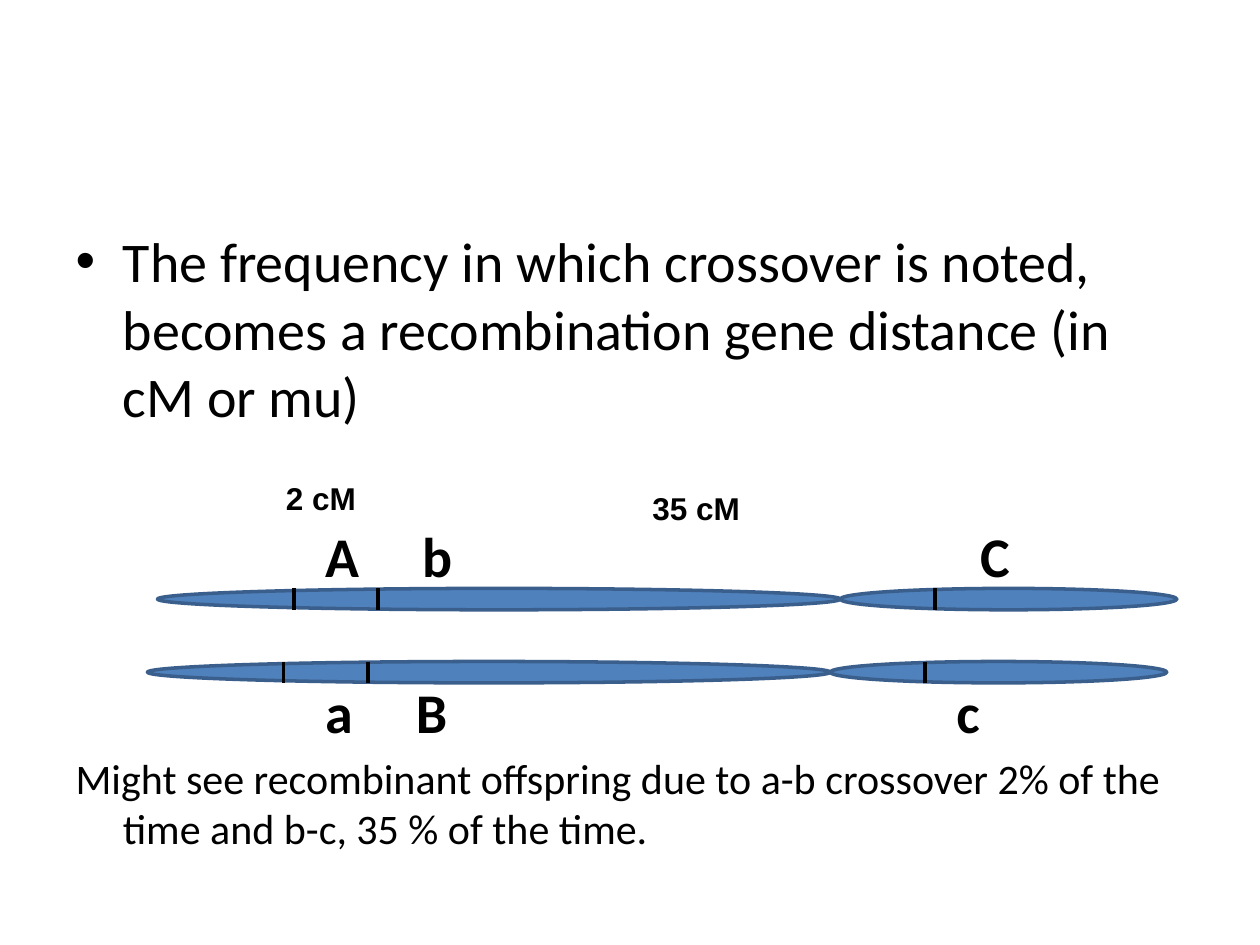
from dataclasses import dataclass

from lxml import etree
from pptx import Presentation
from pptx.dml.color import RGBColor
from pptx.enum.shapes import MSO_CONNECTOR, MSO_SHAPE
from pptx.enum.text import MSO_AUTO_SIZE
from pptx.oxml.ns import qn
from pptx.util import Inches, Pt

ELLIPSE = MSO_SHAPE.OVAL
STRAIGHT = MSO_CONNECTOR.STRAIGHT
NO_AUTOFIT = MSO_AUTO_SIZE.NONE


@dataclass(frozen=True)
class Theme:
    body_font: str = "Calibri"
    label_font: str = "Arial"
    ink: RGBColor = RGBColor(0x00, 0x00, 0x00)
    arm_fill: RGBColor = RGBColor(0x4F, 0x81, 0xBD)
    arm_line: RGBColor = RGBColor(0x3A, 0x5F, 0x8C)
    body_size: Pt = Pt(32)
    note_size: Pt = Pt(24)
    distance_size: Pt = Pt(18)
    arm_weight: Pt = Pt(2)
    locus_weight: Pt = Pt(2.25)


@dataclass(frozen=True)
class Chromosome:
    left: float
    top: float


@dataclass(frozen=True)
class Label:
    text: str
    left: float
    top: float


THEME = Theme()
LONG_ARM, SHORT_ARM, THICKNESS = 5.42, 2.67, 0.17
LOCI = (1.08, 1.75, 6.17)  # offsets from the chromosome's left end
CHROMOSOMES = (Chromosome(1.25, 4.67), Chromosome(1.17, 5.25))
DISTANCES = (Label("2 cM", 2.17, 3.75), Label("35 cM", 5.08, 3.83))
UPPER_ROW, LOWER_ROW = 4.14, 5.38
ALLELES = (
    Label("A", 2.58, UPPER_ROW),
    Label("b", 3.35, UPPER_ROW),
    Label("C", 7.78, UPPER_ROW),
    Label("a", 2.58, LOWER_ROW),
    Label("B", 3.3, LOWER_ROW),
    Label("c", 7.59, LOWER_ROW),
)
NOTE_GAP = Pt(185)  # leaves room for the chromosomes
INTRO = ("The frequency in which crossover is noted, becomes a recombination "
         "gene distance (in cM or mu)")
NOTE = ("Might see recombinant offspring due to a-b crossover 2% of the time "
        "and b-c, 35 % of the time.")


def style_font(para, name: str, size: Pt, bold: bool = False) -> None:
    para.font.name = name
    para.font.size = size
    para.font.bold = bold
    para.font.color.rgb = THEME.ink


def fill_body(body) -> None:
    body.left, body.top = Inches(0.5), Inches(1.75)
    body.width, body.height = Inches(9), Inches(5.58)
    frame = body.text_frame
    frame.auto_size = NO_AUTOFIT
    intro = frame.paragraphs[0]
    intro.text = INTRO
    style_font(intro, THEME.body_font, THEME.body_size)
    note = frame.add_paragraph()
    note.text = NOTE
    note.space_before = NOTE_GAP
    style_font(note, THEME.body_font, THEME.note_size)
    defaults = note._p.get_or_add_pPr().find(qn("a:defRPr"))
    defaults.addprevious(etree.Element(qn("a:buNone")))


def add_arm(group, left: float, top: float, width: float) -> None:
    arm = group.shapes.add_shape(
        ELLIPSE, Inches(left), Inches(top), Inches(width), Inches(THICKNESS))
    arm.shadow.inherit = False
    arm.fill.solid()
    arm.fill.fore_color.rgb = THEME.arm_fill
    arm.line.color.rgb = THEME.arm_line
    arm.line.width = THEME.arm_weight


def add_locus(group, x: float, top: float) -> None:
    locus = group.shapes.add_connector(
        STRAIGHT, Inches(x), Inches(top), Inches(x), Inches(top + THICKNESS))
    locus.line.color.rgb = THEME.ink
    locus.line.width = THEME.locus_weight
    etree.SubElement(locus._element.spPr, qn("a:effectLst"))


def add_chromosome(page, chromosome: Chromosome) -> None:
    group = page.shapes.add_group_shape()
    left, top = chromosome.left, chromosome.top
    add_arm(group, left, top, LONG_ARM)
    add_arm(group, left + LONG_ARM, top, SHORT_ARM)
    for offset in LOCI:
        add_locus(group, left + offset, top)


def add_label(page, label: Label, width: float, height: float,
              font: str, size: Pt):
    box = page.shapes.add_textbox(
        Inches(label.left), Inches(label.top), Inches(width), Inches(height))
    frame = box.text_frame
    frame.word_wrap = True
    para = frame.paragraphs[0]
    para.text = label.text
    style_font(para, font, size, bold=True)
    return frame


def add_allele(page, label: Label) -> None:
    frame = add_label(page, label, 0.4, 0.54, THEME.body_font, THEME.body_size)
    frame.margin_left = frame.margin_right = 0
    frame.margin_top = frame.margin_bottom = 0


def main() -> None:
    deck = Presentation()
    deck.slide_width, deck.slide_height = Inches(10), Inches(7.5)
    page = deck.slides.add_slide(deck.slide_layouts[1])

    # The slide has no title
    title = page.shapes.title._element
    title.getparent().remove(title)

    # Statement and closing note
    fill_body(page.placeholders[1])

    # Homologous chromosomes with alleles and map distances
    for chromosome in CHROMOSOMES:
        add_chromosome(page, chromosome)
    for allele in ALLELES:
        add_allele(page, allele)
    for distance in DISTANCES:
        add_label(page, distance, 0.92, 0.4,
                  THEME.label_font, THEME.distance_size)

    deck.save("out.pptx")


if __name__ == "__main__":
    main()
